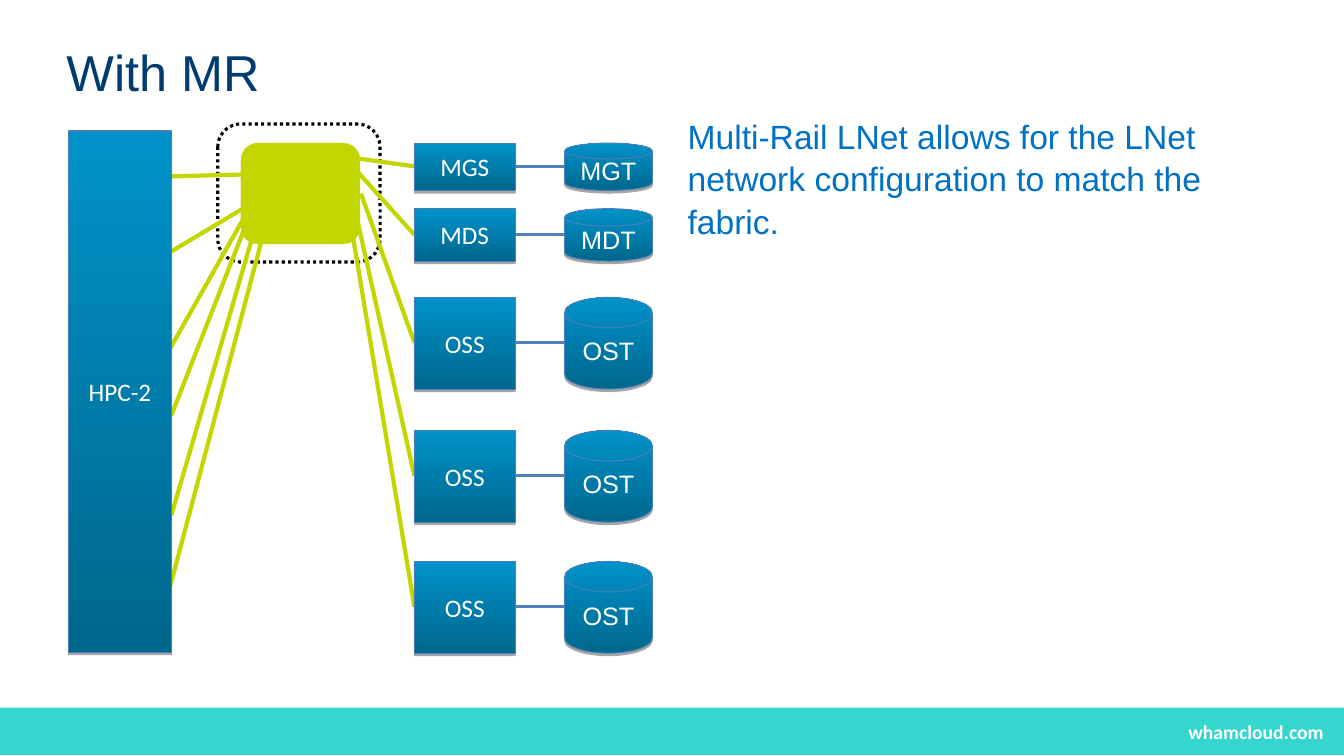
"""Build the slide that shows a Multi-Rail LNet fabric between a client and its storage servers."""
from lxml import etree
from pptx import Presentation
from pptx.dml.color import RGBColor
from pptx.enum.dml import MSO_LINE
from pptx.enum.shapes import MSO_CONNECTOR, MSO_SHAPE
from pptx.enum.text import MSO_ANCHOR, PP_ALIGN
from pptx.oxml import parse_xml
from pptx.oxml.ns import qn
from pptx.util import Pt

PX = 9144
RECT, DISK = MSO_SHAPE.RECTANGLE, MSO_SHAPE.FLOWCHART_MAGNETIC_DISK
ROUNDED, STRAIGHT = MSO_SHAPE.ROUNDED_RECTANGLE, MSO_CONNECTOR.STRAIGHT
DOTTED = MSO_LINE.ROUND_DOT
LEFT, CENTER, RIGHT = PP_ALIGN.LEFT, PP_ALIGN.CENTER, PP_ALIGN.RIGHT
MIDDLE = MSO_ANCHOR.MIDDLE

COLORS = {name: RGBColor.from_string(value) for name, value in {
    "footer": "34D6CE", "white": "FFFFFF", "black": "000000", "title": "003C71",
    "body": "0071C5", "fabric": "C3D600", "deep": "00678D", "bright": "0092C9",
    "edge": "4A7EBB", "link": "4F81BD"}.items()}
SHADOW = ('<a:outerShdw xmlns:a="http://schemas.openxmlformats.org/drawingml/2006/main" '
          'blurRad="0" dist="22860" dir="5400000" rotWithShape="0">'
          '<a:srgbClr val="000000"><a:alpha val="35000"/></a:srgbClr></a:outerShdw>')

prs = Presentation()
prs.slide_width, prs.slide_height = 1333 * PX, 750 * PX
slide = prs.slides.add_slide(prs.slide_layouts[6])
shapes = slide.shapes


def add_link(start, end, color, width):
    link = shapes.add_connector(STRAIGHT, *(value * PX for value in start + end))
    link.line.color.rgb = COLORS[color]
    link.line.width = Pt(width)
    etree.SubElement(link._element.spPr, qn("a:effectLst"))


def add_block(kind, box, label, font):
    block = shapes.add_shape(kind, *(value * PX for value in box))
    block.fill.gradient()
    block.fill.gradient_angle = 90
    for stop, color in zip(block.fill.gradient_stops, ("deep", "bright")):
        stop.color.rgb = COLORS[color]
    block.line.color.rgb = COLORS["edge"]
    block.line.width = Pt(0.75)
    block.shadow.inherit = False
    block._element.spPr.find(qn("a:effectLst")).append(parse_xml(SHADOW))
    block.text_frame.vertical_anchor = MIDDLE
    paragraph = block.text_frame.paragraphs[0]
    paragraph.alignment = CENTER
    run = paragraph.add_run()
    run.text = label
    run.font.name, run.font.size = font, Pt(18)
    run.font.color.rgb = COLORS["white"]


footer = shapes.add_shape(RECT, 0, 702 * PX, 1333 * PX, 47 * PX)
footer.fill.solid()
footer.fill.fore_color.rgb = COLORS["footer"]
footer.line.fill.background()
footer.shadow.inherit = False

texts = [
    ((66, 38, 1200, 64), "With MR", "Arial", 36, "title", LEFT, 1.05),
    ((682, 113, 584, 562),
     "Multi-Rail LNet allows for the LNet network configuration to match the fabric.",
     "Arial", 24, "body", LEFT, 1.05),
    ((1136, 714, 177, 23), "whamcloud.com", "Calibri", 14, "white", RIGHT, 1.0),
]
for box, wording, font, size, color, alignment, spacing in texts:
    frame = shapes.add_textbox(*(value * PX for value in box)).text_frame
    frame.word_wrap = True
    frame.margin_left = frame.margin_right = frame.margin_top = frame.margin_bottom = 0
    paragraph = frame.paragraphs[0]
    paragraph.alignment, paragraph.line_spacing = alignment, spacing
    run = paragraph.add_run()
    run.text = wording
    run.font.name, run.font.size = font, Pt(size)
    run.font.bold = color == "white"
    run.font.color.rgb = COLORS[color]

fabric_border = shapes.add_shape(ROUNDED, 216 * PX, 123 * PX, 161 * PX, 137 * PX)
fabric_border.fill.background()
fabric_border.line.color.rgb = COLORS["black"]
fabric_border.line.width = Pt(2.25)
fabric_border.line.dash_style = DOTTED
fabric_border.shadow.inherit = False

client_rails = [
    ((168, 175), (246, 173)), ((169, 250), (251, 201)), ((168, 347), (242, 216)),
    ((170, 412), (242, 228)), ((170, 511), (251, 233)), ((169, 581), (261, 233)),
]
for client_port, fabric_port in client_rails:
    add_link(client_port, fabric_port, "fabric", 3)

SERVER_LEFT, SERVER_WIDTH = 411, 100
DISK_LEFT, DISK_WIDTH = 560, 87
storage_rows = [
    ("MGS", "MGT", 142, 47, (346, 156)),
    ("MDS", "MDT", 207, 52, (348, 163)),
    ("OSS", "OST", 295, 91, (358, 192)),
    ("OSS", "OST", 427, 91, (353, 212)),
    ("OSS", "OST", 557, 91, (346, 210)),
]
for server, target, top, height, fabric_port in storage_rows:
    middle = top + height // 2
    add_link((SERVER_LEFT, middle), fabric_port, "fabric", 3)
    add_link((SERVER_LEFT + SERVER_WIDTH, middle), (DISK_LEFT, middle), "link", 2)
    add_block(RECT, (SERVER_LEFT, top, SERVER_WIDTH, height), server, "Calibri")
    add_block(DISK, (DISK_LEFT, top, DISK_WIDTH, height), target, "Arial")

add_block(RECT, (68, 130, 102, 517), "HPC-2", "Calibri")

fabric = shapes.add_shape(ROUNDED, 239 * PX, 142 * PX, 118 * PX, 100 * PX)
fabric.fill.solid()
fabric.fill.fore_color.rgb = COLORS["fabric"]
fabric.line.color.rgb = COLORS["fabric"]
fabric.line.width = Pt(0.25)
fabric.shadow.inherit = False

prs.save("out.pptx")
